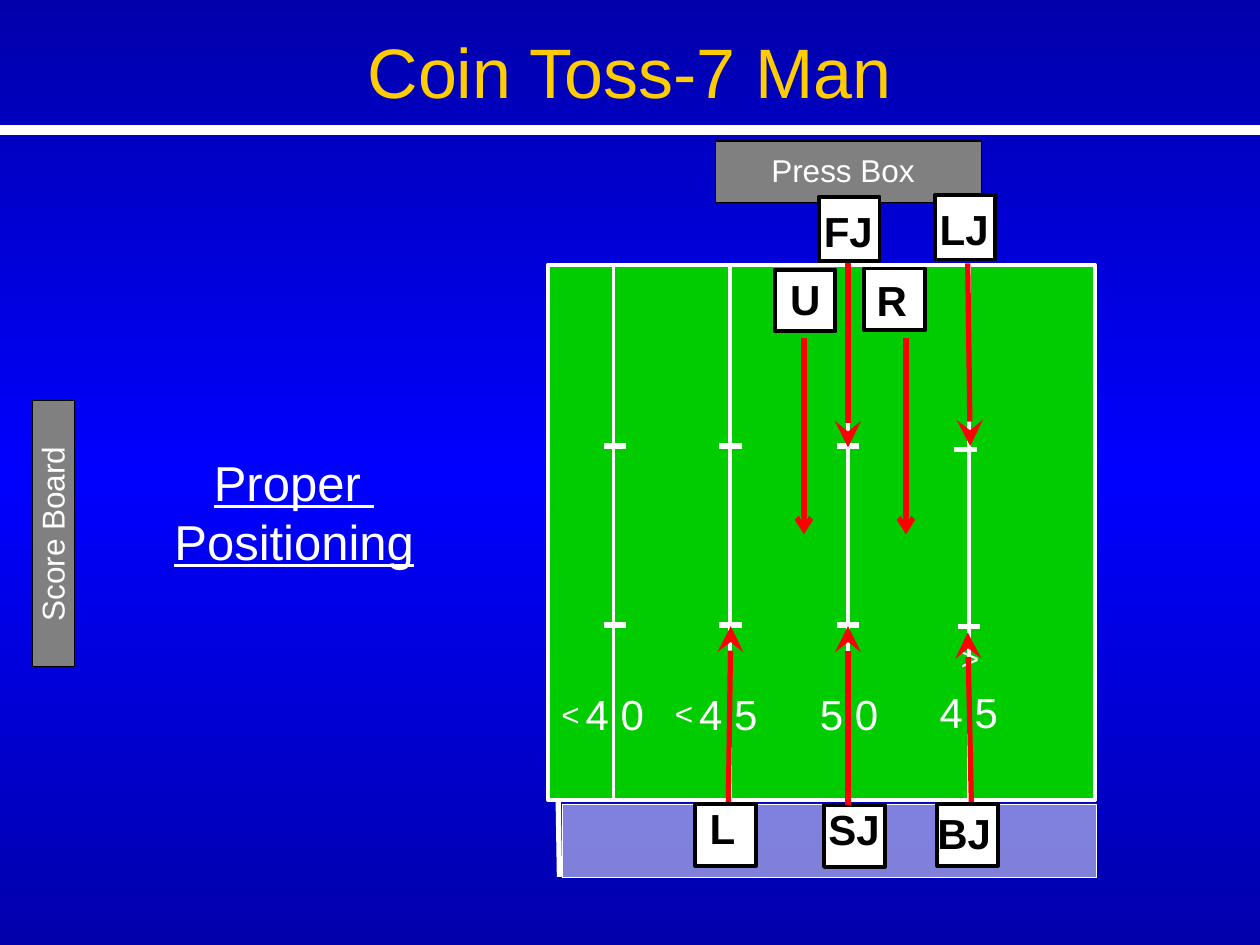
from copy import deepcopy
from pptx import Presentation
from pptx.dml.color import RGBColor
from pptx.enum.dml import MSO_LINE
from pptx.enum.shapes import MSO_CONNECTOR, MSO_SHAPE
from pptx.enum.text import PP_ALIGN
from pptx.oxml.ns import qn
from pptx.oxml.xmlchemy import OxmlElement
from pptx.util import Pt

color = RGBColor.from_string


def add_line(start, end, ink, width, head=None, size="med"):
    line = page.shapes.add_connector(MSO_CONNECTOR.STRAIGHT, *map(Pt, start + end))
    line.line.color.rgb = color(ink)
    line.line.width = Pt(width)
    line._element.spPr.append(OxmlElement("a:effectLst"))
    if head:
        tail = OxmlElement("a:tailEnd")
        for name, value in (("type", head), ("w", size), ("len", size)):
            tail.set(name, value)
        line.line._get_or_add_ln().append(tail)


def add_item(shapes, area, text=None, size=18, ink="FFFFFF", align=PP_ALIGN.RIGHT,
             fill=None, edge="000000", width=0.75, wrap=True):
    if fill:
        item = shapes.add_shape(MSO_SHAPE.RECTANGLE, *map(Pt, area))
        item.shadow.inherit = False
        item.fill.solid()
        item.fill.fore_color.rgb = color(fill)
        item.line.color.rgb = color(edge)
        item.line.width = Pt(width)
        return item
    item = shapes.add_textbox(*map(Pt, area))
    item.text_frame.word_wrap = wrap
    item.text_frame.text = text
    for para in item.text_frame.paragraphs:
        para.alignment = align
        para.font.name = "Arial"
        para.font.size = Pt(size)
        para.font.color.rgb = color(ink)
    return item


deck = Presentation()
deck.slide_width, deck.slide_height = Pt(720), Pt(540)
page = deck.slides.add_slide(deck.slide_layouts[6])

backdrop = page.background.fill
backdrop.gradient()
backdrop.gradient_angle = 90
stop_list = page._element.find(".//" + qn("a:gsLst"))
stop_list.insert(1, deepcopy(stop_list[0]))
for stop, position, tone in zip(backdrop.gradient_stops, (0, 0.5, 1), ("0000AA", "0000FF", "0000AA")):
    stop.position = position
    stop.color.rgb = color(tone)

add_item(page.shapes, (409, 80.6, 152, 35.3), fill="808080")
add_line((0, 74.2), (720, 74.2), "FFFFFF", 6)
heading = add_item(page.shapes, (91.4, 254.9, 153.4, 136), "Proper \nPositioning", 28,
                   align=PP_ALIGN.CENTER, wrap=False)
for para in heading.text_frame.paragraphs:
    para.font.underline = True

add_item(page.shapes, (313.2, 151.2, 312.5, 306), fill="00CC00", edge="FFFFFF", width=2.25)
for x in (350.6, 416.9, 484.6, 553.7):
    add_line((x, 151.5), (x, 457.5), "FFFFFF", 2.25)
add_item(page.shapes, (433.4, 82.8, 96.5, 28.8), "Press Box", wrap=False)
for number, left, top in (("4 0", 320.4, 390.2), ("4 5", 385.2, 390.2),
                          ("5 0", 454.3, 390.2), ("4 5", 522.7, 388.8)):
    add_item(page.shapes, (left, top, 54.7, 36), number, 24)

add_line((319, 457.9), (319.7, 501.1), "FFFFFF", 3)
sideline = add_item(page.shapes, (321.1, 459.4, 305.3, 41.8), fill="FFFFFF", edge="FFFFFF", width=0.25)
sideline.line.dash_style = MSO_LINE.ROUND_DOT
alpha = OxmlElement("a:alpha")
alpha.set("val", "50000")
sideline._element.spPr.find(qn("a:solidFill"))[0].append(alpha)

hashes = [(x, y) for x in (351.4, 417.6, 484.6) for y in (254.9, 357.1)]
for x, y in hashes + [(551.5, 257), (553.7, 357.8)]:
    add_line((x - 6.5, y), (x + 6.5, y), "FFFFFF", 3)
for left, top, turn in ((313.2, 393.8, 0), (378, 393.1, 0), (542, 364, 180)):
    add_item(page.shapes, (left, top, 25.2, 28.8), "<", wrap=False).rotation = turn

add_item(page.shapes, (18.7, 229, 23.8, 152), fill="808080")
add_item(page.shapes, (-27.4, 290.9, 114.5, 28.8), "Score Board").rotation = 270
add_item(page.shapes, (91.4, 13, 536.4, 55.4), "Coin Toss-7 Man", 40, "FFCC00", PP_ALIGN.CENTER)

for start, end in (((416.2, 460.1), (417.6, 357.8)), ((484.6, 149), (484.6, 255.6)),
                   ((555.1, 460.1), (553, 361.4)), ((553, 150.5), (554.4, 254.9))):
    add_line(start, end, "FF0000", 3, "stealth", "lg")
for x in (517.7, 459.4):
    add_line((x, 193), (x, 305.3), "FF0000", 3, "arrow")

officials = (
    ("LJ", 534.2, 111.6, 36.7, 529.9, 113),
    ("BJ", 535.7, 459.4, 35.3, 528.5, 457.9),
    ("L", 397.4, 459.4, 35.3, 398.4, 455),
    ("R", 493.9, 153.4, 35.3, 493.9, 153.4),
    ("U", 442.8, 154.1, 35.3, 444.4, 152.6),
    ("SJ", 470.9, 460.1, 35.3, 466.2, 455.8),
    ("FJ", 468, 112.3, 36.7, 463.7, 113.8),
)
for name, left, top, height, text_left, text_top in officials:
    badge = page.shapes.add_group_shape()
    add_item(badge.shapes, (left, top, 34.6, height), fill="FFFFFF", width=2.25)
    label = add_item(badge.shapes, (text_left, text_top, 48, 36.4), name, 24, "000000", PP_ALIGN.LEFT)
    label.text_frame.paragraphs[0].font.bold = True

add_line((484.6, 460.1), (484.6, 357.8), "FF0000", 3, "stealth", "lg")

deck.save("out.pptx")
